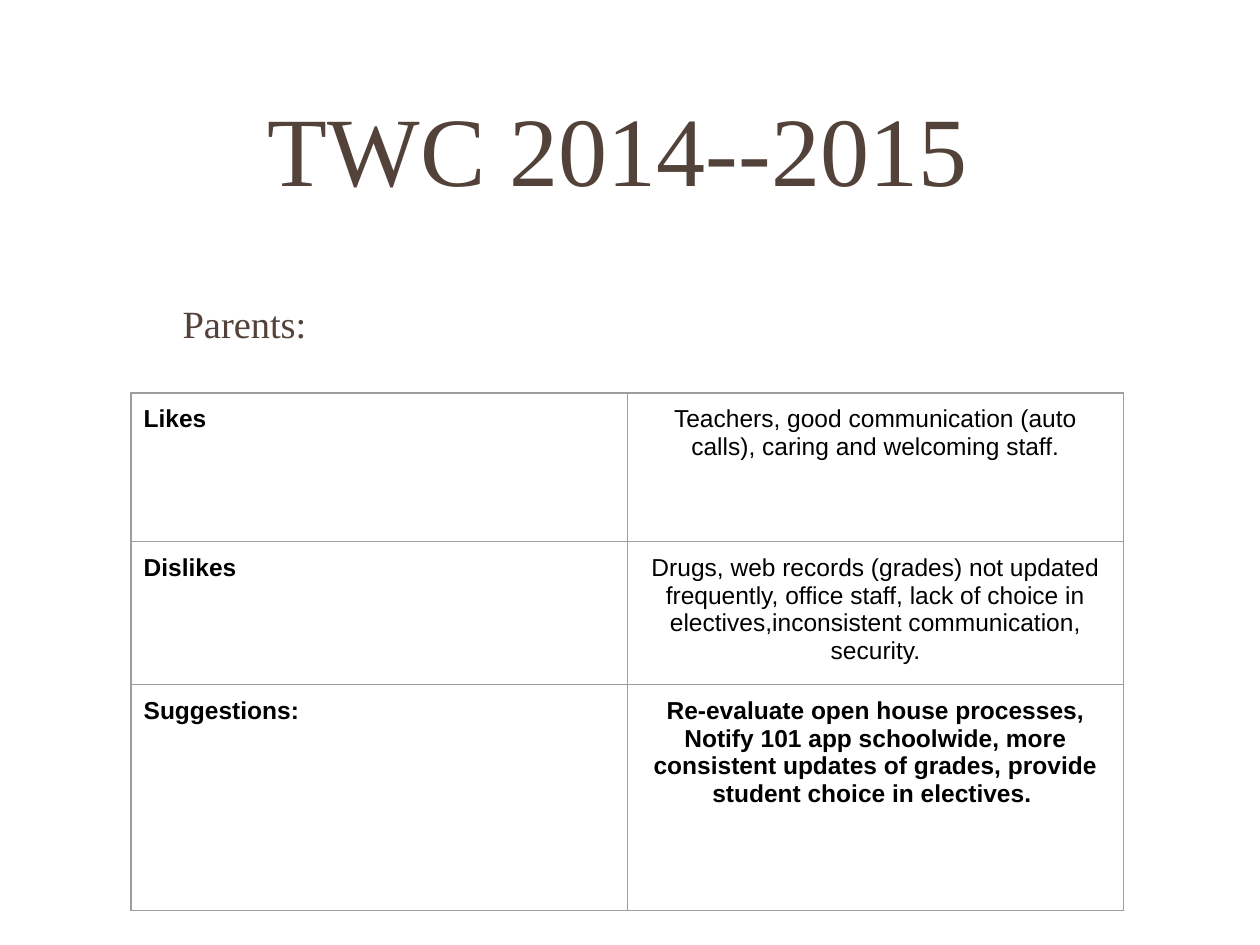
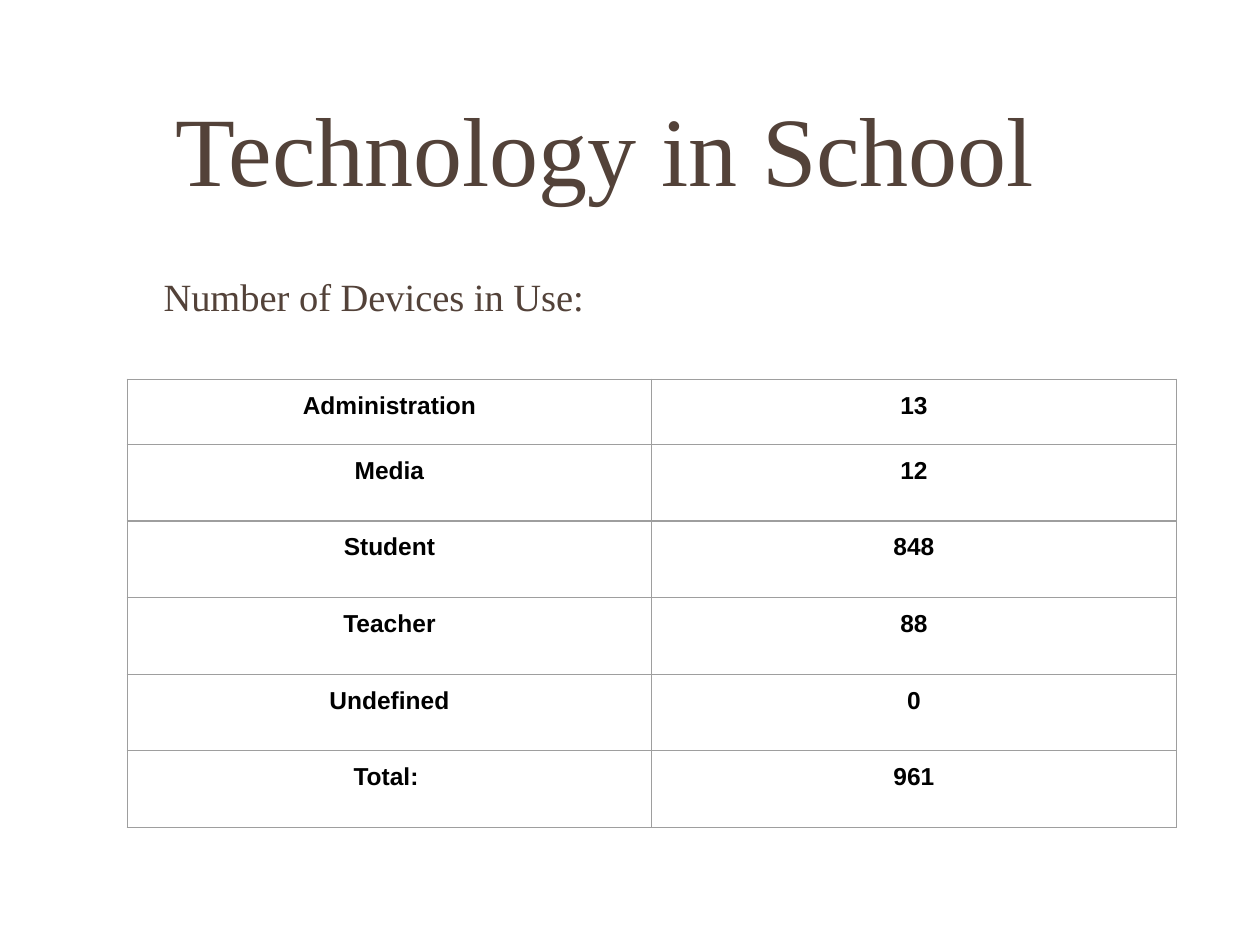
from lxml.etree import SubElement
from pptx import Presentation
from pptx.dml.color import RGBColor
from pptx.enum.text import MSO_ANCHOR as Anchor, PP_ALIGN as Align
from pptx.oxml.ns import qn
from pptx.util import Pt

BROWN, BLACK, GREY = "534239", "000000", "9E9E9E"
INSET = 7.2
TITLE = {"name": "Times New Roman", "size": Pt(56), "color": BROWN}
SUBTITLE = {**TITLE, "size": Pt(22)}
CELL = {"name": "Arial", "size": Pt(14), "color": BLACK, "bold": False}
BOLD = {**CELL, "bold": True}
TITLE_BOX = (63, 30, 594, 108)
SPACE = 14


def rgb(value):
    """Turn a hex string into a colour."""
    return RGBColor.from_string(value)


def write(tf, text, fmt, align):
    """Put one formatted paragraph into a text frame."""
    p = tf.paragraphs[0]
    p.alignment = align
    r = p.add_run()
    r.text = text
    for key, value in fmt.items():
        if key == "color":
            r.font.color.rgb = rgb(value)
        else:
            setattr(r.font, key, value)


def add_text(s, box, text, fmt, align=Align.LEFT, anchor=Anchor.TOP, left=0, right=0):
    """Add a wrapped text box, with extra inset at the left or right."""
    tf = s.shapes.add_textbox(*map(Pt, box)).text_frame
    settings = {"word_wrap": True, "vertical_anchor": anchor,
                "margin_left": Pt(INSET + left), "margin_right": Pt(INSET + right),
                "margin_top": Pt(INSET), "margin_bottom": Pt(INSET)}
    for key, value in settings.items():
        setattr(tf, key, value)
    write(tf, text, fmt, align)


def add_title(s, text, right):
    """Add the slide title, centred left of the extra right inset."""
    add_text(s, TITLE_BOX, text, TITLE, Align.CENTER, Anchor.MIDDLE, right=right)


def add_border(cell):
    """Draw a thin grey line on each side of a cell."""
    tcPr = cell._tc.get_or_add_tcPr()
    for i, side in enumerate(("lnL", "lnR", "lnT", "lnB")):
        ln = tcPr.makeelement(qn(f"a:{side}"), {"w": str(Pt(0.75))})
        fill = SubElement(ln, qn("a:solidFill"))
        SubElement(fill, qn("a:srgbClr"), val=GREY)
        tcPr.insert(i, ln)


def add_grid(s, box, heights, rows):
    """Add a two-column table of (text, format, alignment) cells."""
    x, y, width = box
    table = s.shapes.add_table(len(rows), 2, Pt(x), Pt(y), Pt(width), Pt(sum(heights))).table
    table.first_row = table.horz_banding = False
    for row, height, values in zip(table.rows, heights, rows):
        row.height = Pt(height)
        for cell, (text, fmt, align) in zip(row.cells, values):
            for side in ("left", "right", "top", "bottom"):
                setattr(cell, f"margin_{side}", Pt(INSET))
            cell.fill.background()
            add_border(cell)
            write(cell.text_frame, text, fmt, align)


def parents_slide(s):
    """Build the slide of parent feedback."""
    add_title(s, "TWC 2014--2015", SPACE)
    add_text(s, (86.4, 164.2, 547.2, 286.6), "Parents:", SUBTITLE, left=10.8)
    feedback = [
        ("Likes", "Teachers, good communication (auto calls), caring and welcoming staff.", CELL),
        ("Dislikes", "Drugs, web records (grades) not updated frequently, office staff, "
         "lack of choice in electives,inconsistent communication, security.", CELL),
        ("Suggestions:", "Re-evaluate open house processes, Notify 101 app schoolwide, more "
         "consistent updates of grades, provide student choice in electives. ", BOLD),
    ]
    rows = [[(label, BOLD, Align.LEFT), (text, fmt, Align.CENTER)]
            for label, text, fmt in feedback]
    add_grid(s, (74.9, 224.6, 567.2), [85, 77, 129], rows)


def devices_slide(s):
    """Build the slide of device counts."""
    add_title(s, "Technology in School", 2 * SPACE)
    add_text(s, (86.4, 148.8, 547.2, 35.3), "Number of Devices in Use:", SUBTITLE)
    counts = {"Administration": "13", "Media": "12", "Student": "848",
              "Teacher": "88", "Undefined": "0", "Total: ": "961"}
    rows = [[(text, BOLD, Align.CENTER) for text in pair] for pair in counts.items()]
    add_grid(s, (72.7, 216.7, 599.4), [37.2] + [43.8] * 5, rows)


def main():
    """Build and save the presentation."""
    prs = Presentation()
    prs.slide_width, prs.slide_height = Pt(720), Pt(540)
    for build in (parents_slide, devices_slide):
        build(prs.slides.add_slide(prs.slide_layouts[6]))
    prs.save("out.pptx")


if __name__ == "__main__":
    main()
